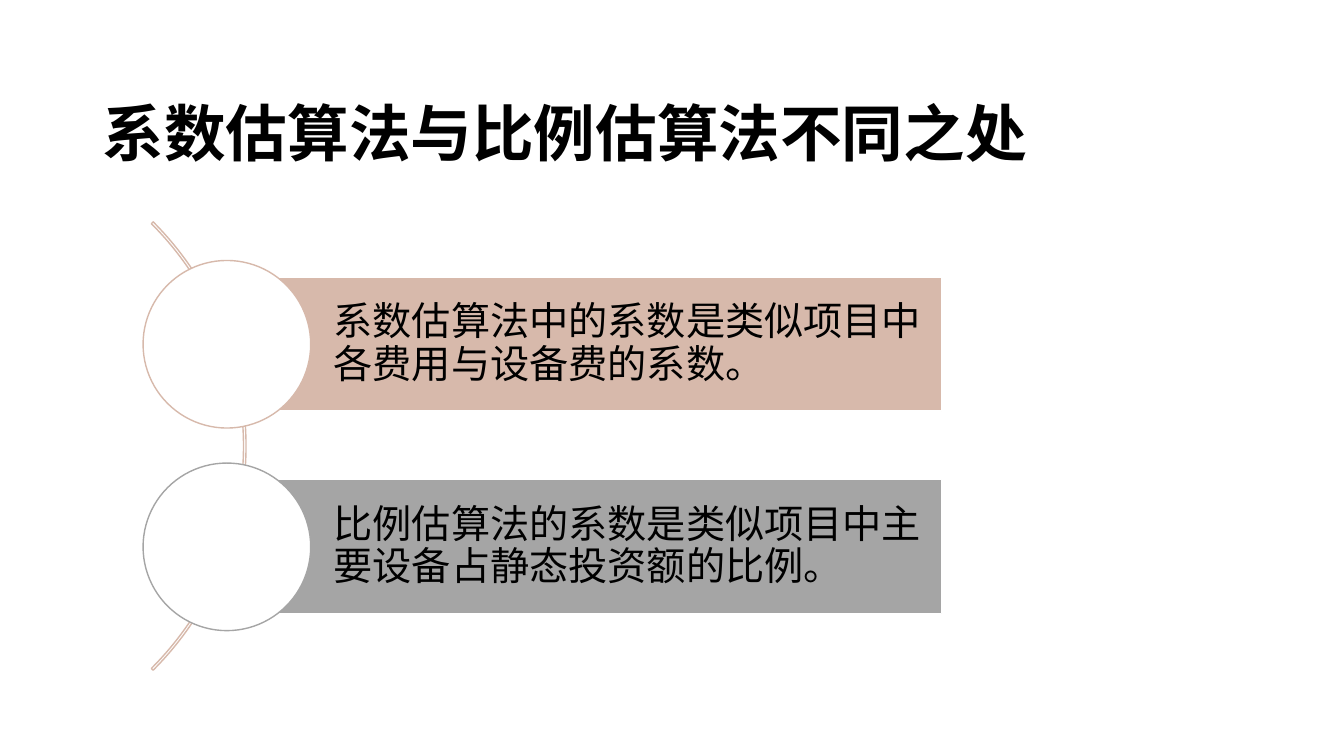
from lxml.etree import SubElement
from pptx import Presentation
from pptx.dml.color import RGBColor
from pptx.enum.shapes import MSO_SHAPE as Preset
from pptx.enum.text import MSO_ANCHOR as Anchor, PP_ALIGN as Align
from pptx.oxml.ns import qn
from pptx.util import Inches, Pt

CJK_FONT = "Noto Sans CJK SC"
ROSE, GRAY, WHITE, BLACK = "D7B9AB", "A5A5A5", "FFFFFF", "000000"
HEADING = "系数估算法与比例估算法不同之处"
METHODS = [
    ("系数估算法中的系数是类似项目中各费用与设备费的系数。", ROSE),
    ("比例估算法的系数是类似项目中主要设备占静态投资额的比例。", GRAY),
]


def color(hex_code):
    """Return the colour for a hex string."""
    return RGBColor.from_string(hex_code)


def add_outlined(slide, preset, box, fill, line):
    """Add a preset shape with a thin outline; no fill when fill is None."""
    shape = slide.shapes.add_shape(preset, *map(Inches, box))
    shape.shadow.inherit = False
    if fill:
        shape.fill.solid()
        shape.fill.fore_color.rgb = color(fill)
    else:
        shape.fill.background()
    shape.line.color.rgb = color(line)
    shape.line.width = Pt(1)
    return shape


def write(frame, text, size, font, align, spacing, insets, bold=False):
    """Write one vertically centred paragraph into a text frame."""
    frame.word_wrap = True
    frame.vertical_anchor = Anchor.MIDDLE
    (frame.margin_left, frame.margin_top,
     frame.margin_right, frame.margin_bottom) = map(Inches, insets)
    paragraph = frame.paragraphs[0]
    paragraph.text = text
    paragraph.alignment = align
    paragraph.line_spacing = spacing
    paragraph.font.size = Pt(size)
    paragraph.font.bold = bold
    paragraph.font.name = font
    paragraph.font.color.rgb = color(BLACK)
    defaults = paragraph._p.pPr.find(qn("a:defRPr"))
    SubElement(defaults, qn("a:ea"), typeface=CJK_FONT)
    return paragraph


def add_heading(slide, box):
    """Place the slide heading in its box."""
    heading = slide.shapes.add_textbox(*map(Inches, box))
    write(heading.text_frame, HEADING, 44, "Times New Roman",
          Align.JUSTIFY, 1.5, (0.1, 0.05, 0.1, 0.05), bold=True)


def add_arc(slide, box):
    """Draw the thin arc that links the methods."""
    arc = add_outlined(slide, Preset.BLOCK_ARC, box, None, ROSE)
    for index, value in enumerate((189, 27, 0.004)):
        arc.adjustments[index] = value


def add_method(slide, box, text, accent):
    """Place a method's bar with a circle centred on its left edge."""
    left, top, width, height = box
    diameter = height * 1.25
    bar = add_outlined(slide, Preset.RECTANGLE, box, accent, WHITE)
    paragraph = write(bar.text_frame, text, 28, CJK_FONT, Align.LEFT, 0.9,
                      (1.06, 0.08, 0.08, 0.08))
    paragraph.space_after = Pt(10)
    circle = (left - diameter / 2, top + (height - diameter) / 2,
              diameter, diameter)
    add_outlined(slide, Preset.OVAL, circle, WHITE, accent)


def add_methods(slide, box, pitch):
    """Stack the method bars downwards from the first bar's box."""
    left, top, width, height = box
    for row, (text, accent) in enumerate(METHODS):
        add_method(slide, (left, top + row * pitch, width, height), text, accent)


def main():
    """Build and save the slide."""
    deck = Presentation()
    deck.slide_width, deck.slide_height = Inches(13.33), Inches(7.5)
    slide = deck.slides.add_slide(deck.slide_layouts[6])
    add_heading(slide, (0.92, 0.4, 11.5, 1.45))
    add_arc(slide, (-3.85, 1.28, 6.29, 6.29))
    add_methods(slide, (2.25, 2.75, 7.09, 1.33), pitch=2.01)
    deck.save("out.pptx")


if __name__ == "__main__":
    main()
